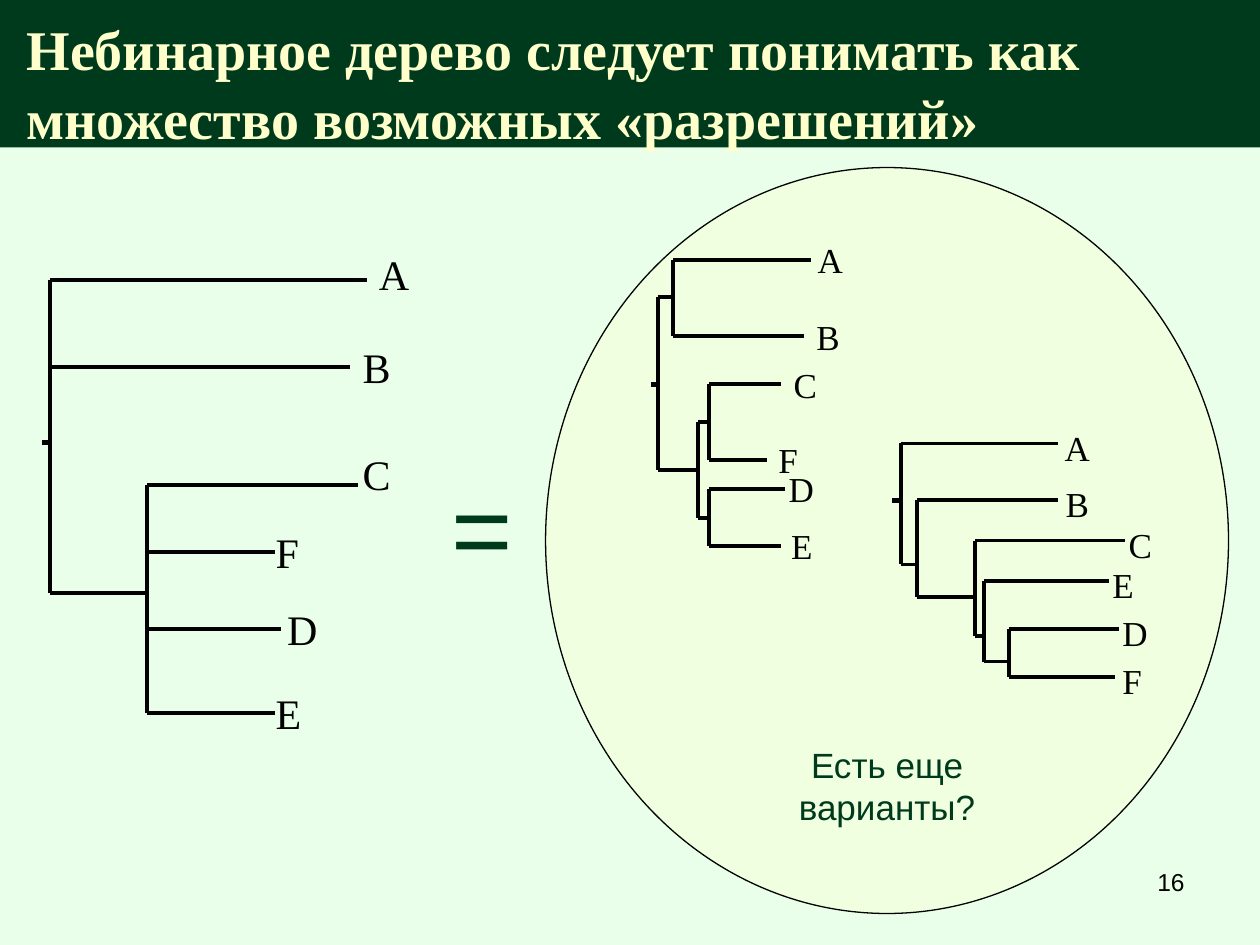
from dataclasses import dataclass

from lxml import etree
from pptx import Presentation
from pptx import util as u
from pptx.dml.color import RGBColor
from pptx.enum import shapes, text
from pptx.oxml import ns


@dataclass(frozen=True)
class Theme:
    background: RGBColor = RGBColor.from_string("E9FFE9")
    dark: RGBColor = RGBColor.from_string("003A1C")
    cream: RGBColor = RGBColor.from_string("FFFFCC")
    ink: RGBColor = RGBColor.from_string("000000")
    serif: str = "Times New Roman"
    sans: str = "Arial"
    title: int = 32
    equals: int = 60
    large_label: int = 24
    label: int = 20
    number: int = 14
    outline: float = 0.75
    branch: float = 2.25
    stem: float = 3


@dataclass(frozen=True)
class Leaf:
    name: str
    y: float
    tip: float
    label_x: float
    label_shift: float = 0


@dataclass(frozen=True)
class Branch:
    x: float
    y: float
    children: tuple


THEME = Theme()
COLUMNS, ROWS = 100, 75
SLIDE_WIDTH, SLIDE_HEIGHT = u.Inches(10), u.Inches(7.5)

UNRESOLVED = Branch(0.7, 12.9, (
    Leaf("A", 0, 25.8, 25.8, -0.5),
    Leaf("B", 6.9, 24.5, 24.5),
    Branch(8.4, 24.9, (
        Leaf("C", 16.3, 25.1, 24.5, -0.9),
        Leaf("F", 21.6, 18.5, 17.6),
        Leaf("D", 27.7, 19, 18.5),
        Leaf("E", 34.4, 18.5, 17.6),
    )),
))

BALANCED = Branch(0.5, 9.9, (
    Branch(1.7, 3, (
        Leaf("A", 0, 12.7, 12.2),
        Leaf("B", 6.1, 12.1, 12.1),
    )),
    Branch(3.7, 16.7, (
        Branch(4.6, 12.9, (
            Leaf("C", 9.9, 10.3, 10.3),
            Leaf("F", 15.9, 9.2, 9.1),
        )),
        Branch(4.6, 20.5, (
            Leaf("D", 18.2, 10.6, 9.9),
            Leaf("E", 22.7, 10.3, 10.1),
        )),
    )),
))

LADDER = Branch(0.7, 4.5, (
    Leaf("A", 0, 13.2, 12.7, 0.3),
    Branch(2, 9.6, (
        Leaf("B", 4.5, 13.2, 12.8, 0.3),
        Branch(6.6, 12.2, (
            Leaf("C", 7.7, 18.5, 17.8, 0.3),
            Branch(7.3, 15.3, (
                Leaf("E", 10.9, 17.2, 16.5, 0.3),
                Branch(9.3, 17.3, (
                    Leaf("D", 14.7, 18, 17.3, 0.3),
                    Leaf("F", 18.5, 17.7, 17.3, 0.3),
                )),
            )),
        )),
    )),
))


def column(count):
    return round(SLIDE_WIDTH * count / COLUMNS)


def row(count):
    return round(SLIDE_HEIGHT * count / ROWS)


def grid_box(left, top, width, height):
    return column(left), row(top), column(width), row(height)


def style_font(paragraph, name, size, color, bold=False):
    paragraph.font.name = name
    paragraph.font.size = u.Pt(size)
    paragraph.font.color.rgb = color
    paragraph.font.bold = bold


def add_label(parent, box, words, name, size, color,
              align=text.PP_ALIGN.LEFT, anchor=text.MSO_ANCHOR.MIDDLE, wrap=False):
    frame = parent.add_textbox(*grid_box(*box)).text_frame
    frame.word_wrap = wrap
    frame.vertical_anchor = anchor
    paragraph = frame.paragraphs[0]
    paragraph.text = words
    paragraph.alignment = align
    style_font(paragraph, name, size, color)


def add_line(parent, start, end, width):
    line = parent.add_connector(
        shapes.MSO_CONNECTOR.STRAIGHT,
        column(start[0]), row(start[1]), column(end[0]), row(end[1]),
    )
    line.line.color.rgb = THEME.ink
    line.line.width = u.Pt(width)
    etree.SubElement(line._element.spPr, ns.qn("a:effectLst"))


def draw_node(parent, origin, node, size):
    left, top = origin
    heights = [child.y for child in node.children]
    x = left + node.x
    add_line(parent, (x, top + min(heights)), (x, top + max(heights)), THEME.branch)
    for child in node.children:
        is_leaf = isinstance(child, Leaf)
        y = top + child.y
        end = child.tip if is_leaf else child.x
        add_line(parent, (x, y), (left + end, y), THEME.branch)
        if is_leaf:
            side = size / 6 + 0.6
            box = (left + child.label_x, y + child.label_shift - side / 2, side, side)
            add_label(parent, box, child.name, THEME.serif, size, THEME.ink)
        else:
            draw_node(parent, origin, child, size)


def add_tree(slide, origin, root, size):
    group = slide.shapes.add_group_shape().shapes
    left, top = origin
    y = top + root.y
    add_line(group, (left, y), (left + root.x, y), THEME.stem)
    draw_node(group, origin, root, size)


def add_title(slide, box):
    title = slide.shapes.title
    title.left, title.top, title.width, title.height = grid_box(*box)
    title.fill.solid()
    title.fill.fore_color.rgb = THEME.dark
    frame = title.text_frame
    frame.word_wrap = True
    frame.auto_size = text.MSO_AUTO_SIZE.NONE
    frame.vertical_anchor = text.MSO_ANCHOR.TOP
    frame.margin_left, frame.margin_right = column(2.1), column(1)
    frame.margin_top, frame.margin_bottom = row(1.1), 0
    paragraph = frame.paragraphs[0]
    paragraph.text = "Небинарное дерево следует понимать как\vмножество возможных «разрешений»"
    paragraph.alignment = text.PP_ALIGN.LEFT
    paragraph.line_spacing = u.Pt(39)
    style_font(paragraph, THEME.serif, THEME.title, THEME.cream, bold=True)


def add_resolution_set(slide, box):
    left, top, width, height = box
    oval = slide.shapes.add_shape(shapes.MSO_SHAPE.OVAL, *grid_box(*box))
    oval.shadow.inherit = False
    oval.fill.solid()
    oval.fill.fore_color.rgb = THEME.cream
    color = oval._element.spPr.find(ns.qn("a:solidFill"))[0]
    etree.SubElement(color, ns.qn("a:alpha"), val="31000")
    oval.line.color.rgb = THEME.ink
    oval.line.width = u.Pt(THEME.outline)
    add_tree(slide, (left + 8.4, top + 7.3), BALANCED, THEME.label)
    add_tree(slide, (left + 27.5, top + 21.9), LADDER, THEME.label)
    add_label(slide.shapes, (left + width / 4, top + height * 0.78, width / 2, 5.8),
              "Есть еще варианты?", THEME.sans, THEME.label, THEME.dark,
              text.PP_ALIGN.CENTER)


def main():
    presentation = Presentation()
    presentation.slide_width, presentation.slide_height = SLIDE_WIDTH, SLIDE_HEIGHT
    slide = presentation.slides.add_slide(presentation.slide_layouts[5])
    slide.background.fill.solid()
    slide.background.fill.fore_color.rgb = THEME.background
    add_title(slide, (0, 0, COLUMNS, 11.7))
    add_resolution_set(slide, (43.3, 13.3, 54.2, 59.2))
    add_tree(slide, (3.3, 22.2), UNRESOLVED, THEME.large_label)
    add_label(slide.shapes, (33.3, 39.2, 10, 5), "=", THEME.sans, THEME.equals,
              THEME.dark, text.PP_ALIGN.CENTER)
    add_label(slide.shapes, (71.7, 68.3, 23.3, 5.2), "16", THEME.sans, THEME.number,
              THEME.ink, text.PP_ALIGN.RIGHT, text.MSO_ANCHOR.TOP, wrap=True)
    presentation.save("out.pptx")


if __name__ == "__main__":
    main()
